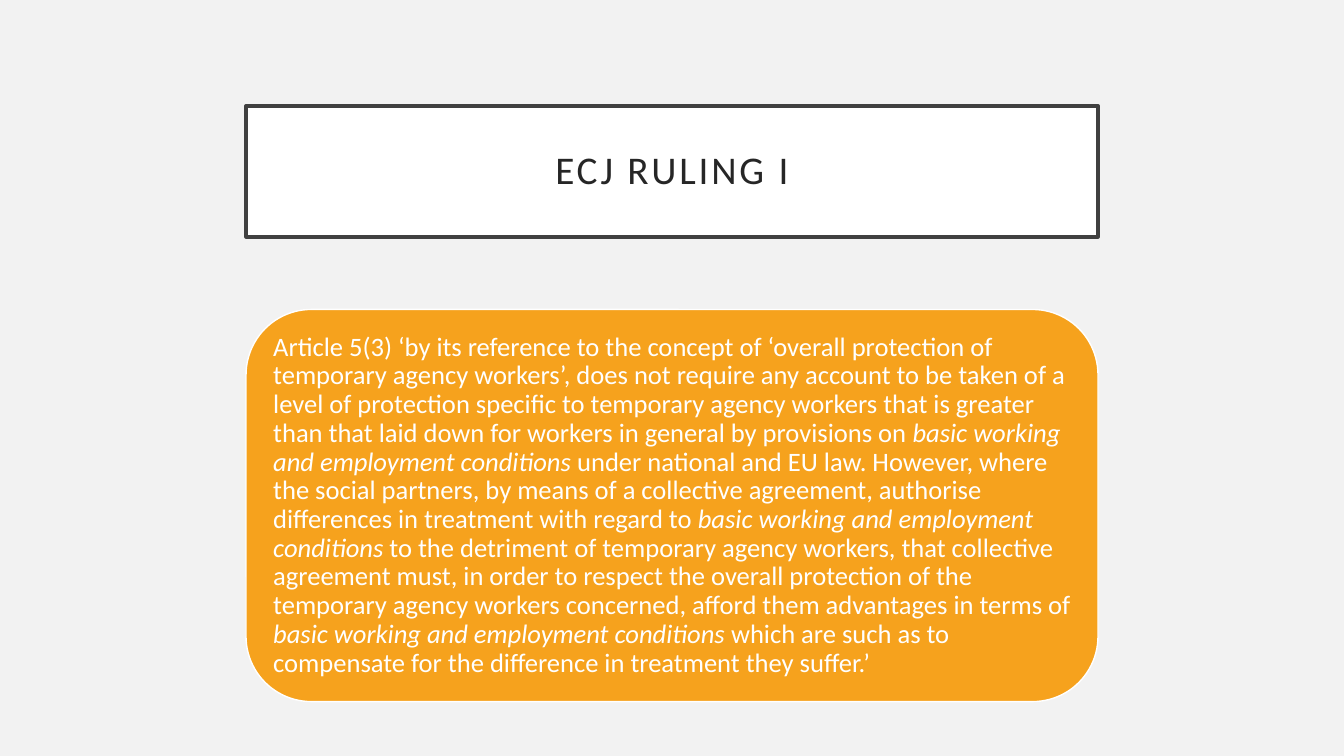
from pptx import Presentation
from pptx.dml.color import RGBColor
from pptx.enum.shapes import MSO_SHAPE
from pptx.enum.text import MSO_ANCHOR, MSO_AUTO_SIZE, PP_ALIGN
from pptx.util import Inches, Pt

ROUNDED = MSO_SHAPE.ROUNDED_RECTANGLE
MIDDLE = MSO_ANCHOR.MIDDLE
NO_FIT = MSO_AUTO_SIZE.NONE
CENTER, LEFT = PP_ALIGN.CENTER, PP_ALIGN.LEFT
TITLE_ONLY = 5
COLUMN_LEFT, COLUMN_WIDTH = 2.44, 8.45

CONDITIONS = "basic working and employment conditions"
RULING = [
    "Article 5(3) ‘by its reference to the concept of ‘overall protection of "
    "temporary agency workers’, does not require any account to be taken of a "
    "level of protection specific to temporary agency workers that is greater "
    "than that laid down for workers in general by provisions on ",
    " under national and EU law. However, where the social partners, by means "
    "of a collective agreement, authorise differences in treatment with regard to ",
    " to the detriment of temporary agency workers, that collective agreement "
    "must, in order to respect the overall protection of the temporary agency "
    "workers concerned, afford them advantages in terms of ",
    " which are such as to compensate for the difference in treatment they suffer.’",
]


def color(value):
    """Turn a hex string into a colour."""
    return RGBColor.from_string(value)


def style_box(shape, fill, line, weight):
    """Give a shape a solid fill and outline."""
    shape.fill.solid()
    shape.fill.fore_color.rgb = color(fill)
    shape.line.color.rgb = color(line)
    shape.line.width = Pt(weight)


def style_text(frame, inset, size, ink, alignment):
    """Format a text frame and return its first paragraph."""
    frame.word_wrap = True
    frame.auto_size = NO_FIT
    frame.vertical_anchor = MIDDLE
    frame.margin_left = frame.margin_right = Inches(inset)
    frame.margin_top = frame.margin_bottom = Inches(inset)
    para = frame.paragraphs[0]
    para.alignment = alignment
    para.line_spacing = 0.9
    para.font.name = "Calibri"
    para.font.size = Pt(size)
    para.font.color.rgb = color(ink)
    return para


def place_title(page, box, text):
    """Set the framed slide title in the given box."""
    title = page.shapes.title
    title.left, title.top, title.width, title.height = map(Inches, box)
    style_box(title, "FFFFFF", "404040", 2.5)
    para = style_text(title.text_frame, 0.2, 28, "262626", CENTER)
    span = para.add_run()
    span.text = text
    span.font._element.set("spc", "200")


def add_ruling(page, box, passages, term):
    """Add the rounded panel, with the italic term between passages."""
    panel = page.shapes.add_shape(ROUNDED, *map(Inches, box))
    panel.shadow.inherit = False
    style_box(panel, "F6A21D", "FFFFFF", 1)
    para = style_text(panel.text_frame, 0.08, 19, "FFFFFF", LEFT)
    for index, passage in enumerate(passages):
        if index:
            span = para.add_run()
            span.text = term
            span.font.italic = True
        para.add_run().text = passage


def main():
    """Build and save the deck."""
    deck = Presentation()
    deck.slide_width, deck.slide_height = Inches(13.33), Inches(7.5)
    page = deck.slides.add_slide(deck.slide_layouts[TITLE_ONLY])
    page.background.fill.solid()
    page.background.fill.fore_color.rgb = color("F2F2F2")
    place_title(page, (COLUMN_LEFT, 1.05, COLUMN_WIDTH, 1.3), "ECJ RULING I")
    add_ruling(page, (COLUMN_LEFT, 3.07, COLUMN_WIDTH, 3.89), RULING, CONDITIONS)
    deck.save("out.pptx")


if __name__ == "__main__":
    main()
